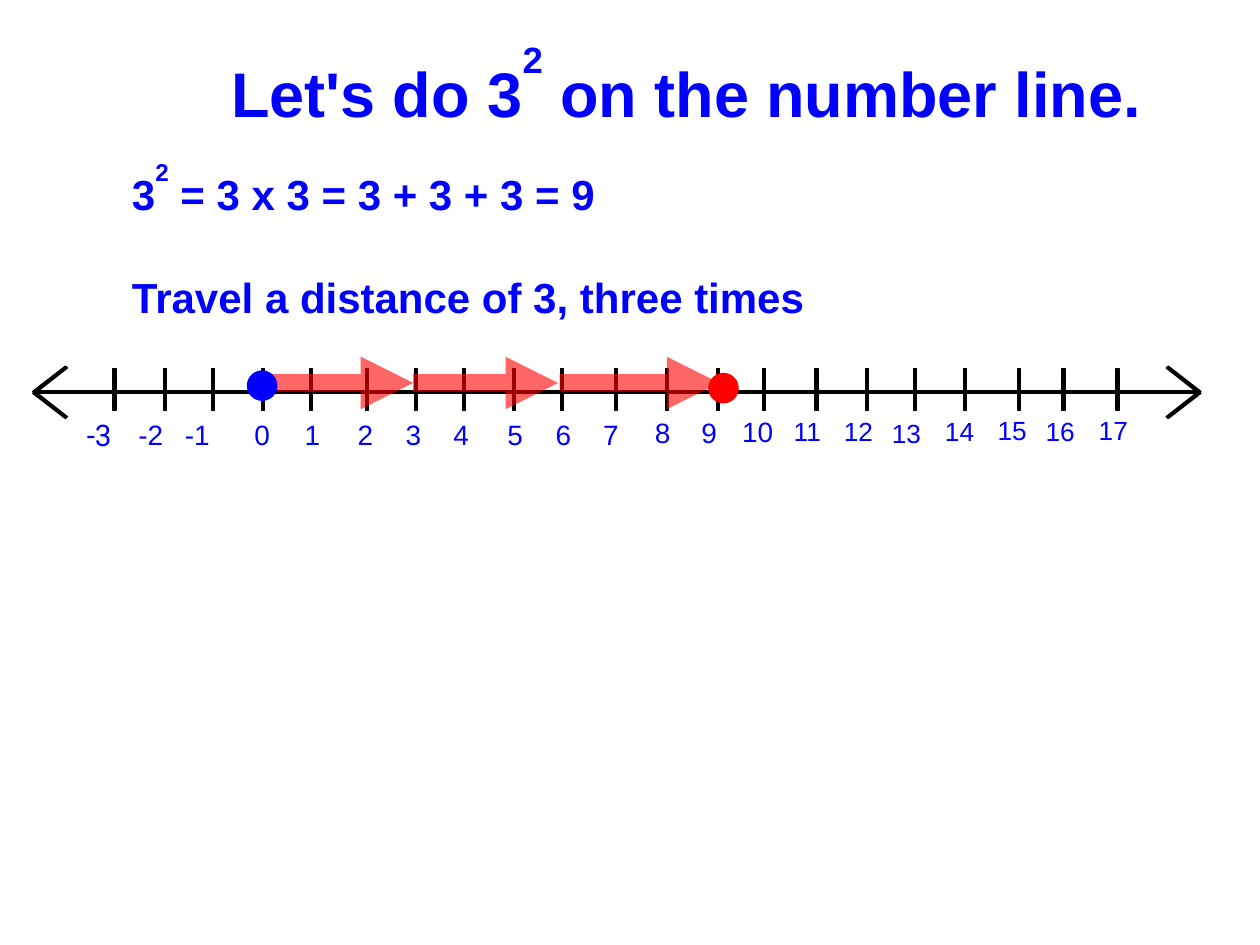
from pptx import Presentation
from pptx.dml.color import RGBColor
from pptx.enum.shapes import MSO_CONNECTOR as Connector, MSO_SHAPE as Shape
from pptx.enum.text import MSO_ANCHOR as Anchor, MSO_AUTO_SIZE as AutoSize, PP_ALIGN as Align
from pptx.oxml.ns import qn
from pptx.util import Cm, Pt
from lxml.etree import SubElement

BLUE, RED, BLACK = "0000FF", "FF0000", "000000"
AXIS_Y = 7.91
AXIS_ENDS = 24.87
TICK_TOP, TICK_HEIGHT, TICK_WIDTH = 7.43, 0.84, 0.06

TICKS = [2.31, 3.33, 4.29, 5.31, 6.27, 7.4, 8.38, 9.35, 10.36, 11.33, 12.42,
         13.44, 14.48, 15.4, 16.46, 17.48, 18.44, 19.46, 20.55, 21.44, 22.53]

LABELS = [
    ("-3", 1.55, 8.31, 17, "Roboto"), ("-2", 2.59, 8.31, 16, "Arial"),
    ("-1", 3.53, 8.31, 16, "Arial"), ("0", 4.93, 8.31, 16, "Arial"),
    ("1", 5.94, 8.31, 16, "Arial"), ("2", 7.01, 8.31, 16, "Arial"),
    ("3", 7.98, 8.31, 16, "Arial"), ("4", 8.94, 8.31, 16, "Arial"),
    ("5", 10.03, 8.31, 16, "Arial"), ("6", 11, 8.31, 16, "Arial"),
    ("7", 11.96, 8.31, 16, "Arial"), ("8", 13, 8.28, 16, "Arial"),
    ("9", 13.94, 8.28, 16, "Arial"), ("10", 14.76, 8.26, 16, "Arial"),
    ("11", 15.8, 8.28, 15, "Arial"), ("12", 16.81, 8.28, 15, "Arial"),
    ("13", 17.78, 8.31, 15, "Arial"), ("14", 18.85, 8.28, 15, "Arial"),
    ("15", 19.91, 8.26, 15, "Arial"), ("16", 20.88, 8.28, 15, "Arial"),
    ("17", 21.95, 8.26, 15, "Arial"),
]

JUMPS = [(5.38, 8.33), (8.33, 11.25), (11.28, 14.5)]


def color(value):
    return RGBColor.from_string(value)


def paint(shape, value, line_width):
    shape.shadow.inherit = False
    shape.fill.solid()
    shape.fill.fore_color.rgb = color(value)
    shape.line.color.rgb = color(value)
    shape.line.width = Pt(line_width)


def set_frame(box, left, top, width, height):
    box.left, box.top, box.width, box.height = Cm(left), Cm(top), Cm(width), Cm(height)
    frame = box.text_frame
    frame.word_wrap = True
    frame.auto_size = AutoSize.SHAPE_TO_FIT_TEXT
    frame.vertical_anchor = Anchor.TOP
    frame.margin_left = frame.margin_right = Cm(0.2)
    frame.margin_top = frame.margin_bottom = Cm(0.1)
    return frame


def format_span(span, size, bold=False, font="Arial"):
    span.font.name = font
    span.font.size = Pt(size)
    span.font.bold = bold
    span.font.color.rgb = color(BLUE)


def write_power(para, before, power, after, size):
    para.space_before = Pt(0)
    for text in (before, power, after):
        span = para.add_run()
        span.text = text
        format_span(span, size, bold=True)
        if text == power:
            span._r.get_or_add_rPr().set("baseline", "70000")


def remove_bullet(para):
    properties = para._p.get_or_add_pPr()
    properties.set("marL", "0")
    properties.set("indent", "0")
    SubElement(properties, qn("a:buNone"))


def add_title(page):
    frame = set_frame(page.shapes.title, 4.27, 0.64, 19.48, 1.75)
    para = frame.paragraphs[0]
    para.alignment = Align.CENTER
    write_power(para, "Let's do 3", "2", " on the number line. ", 36)


def add_body(page):
    frame = set_frame(page.placeholders[1], 2.46, 3.07, 15.95, 3.28)
    equation = frame.paragraphs[0]
    write_power(equation, "3", "2", " = 3 x 3 = 3 + 3 + 3 = 9", 24)
    travel = frame.add_paragraph()
    travel.text = "Travel a distance of 3, three times"
    travel.space_before = Pt(30)
    format_span(travel.runs[0], 24, bold=True)
    for para in (equation, travel):
        remove_bullet(para)


def add_label(page, text, left, top, size, font):
    box = page.shapes.add_textbox(0, 0, 0, 0)
    frame = set_frame(box, left, top, 2, 0.9)
    frame.text = text
    format_span(frame.paragraphs[0].runs[0], size, font=font)


def add_polygon(shapes, points):
    corners = [(Cm(x), Cm(y)) for x, y in points]
    builder = shapes.build_freeform(*corners[0])
    builder.add_line_segments(corners[1:], close=True)
    paint(builder.convert_to_shape(), BLACK, 0)


def add_bar(shapes, left, top, width, height):
    right, bottom = left + width, top + height
    add_polygon(shapes, [(left, top), (right, top), (right, bottom), (left, bottom)])


def add_axis(page):
    axis = page.shapes.add_group_shape().shapes
    add_bar(axis, 0.71, 7.88, 23.45, 0.06)
    arm = [(0.71, 7.93), (0.66, 7.89), (1.32, 7.38), (1.36, 7.42)]
    lower_arm = [(x, 2 * AXIS_Y - y) for x, y in arm]
    for points in (arm, lower_arm):
        add_polygon(axis, points)
        add_polygon(axis, [(AXIS_ENDS - x, y) for x, y in points])


def add_jump(page, start, end):
    arrow = page.shapes.add_connector(
        Connector.STRAIGHT, Cm(start), Cm(7.72), Cm(end), Cm(7.72))
    arrow.line.color.rgb = color(RED)
    arrow.line.width = Pt(10)
    line = arrow.line._get_or_add_ln()
    SubElement(line.find(".//" + qn("a:srgbClr")), qn("a:alpha"), val="60000")
    SubElement(line, qn("a:tailEnd"), type="triangle")
    SubElement(arrow._element.spPr, qn("a:effectLst"))


def add_dot(page, left, top, value):
    dot = page.shapes.add_shape(Shape.OVAL, Cm(left), Cm(top), Cm(0.51), Cm(0.51))
    paint(dot, value, 3)


def main():
    deck = Presentation()
    deck.slide_width, deck.slide_height = Cm(25.4), Cm(19.05)
    page = deck.slides.add_slide(deck.slide_layouts[1])
    add_title(page)
    add_body(page)
    for label in LABELS:
        add_label(page, *label)
    add_axis(page)
    for center in TICKS:
        add_bar(page.shapes, center - TICK_WIDTH / 2, TICK_TOP, TICK_WIDTH, TICK_HEIGHT)
    for start, end in JUMPS:
        add_jump(page, start, end)
    add_dot(page, 5.03, 7.52, BLUE)
    add_dot(page, 14.33, 7.57, RED)
    deck.save("out.pptx")


if __name__ == "__main__":
    main()
